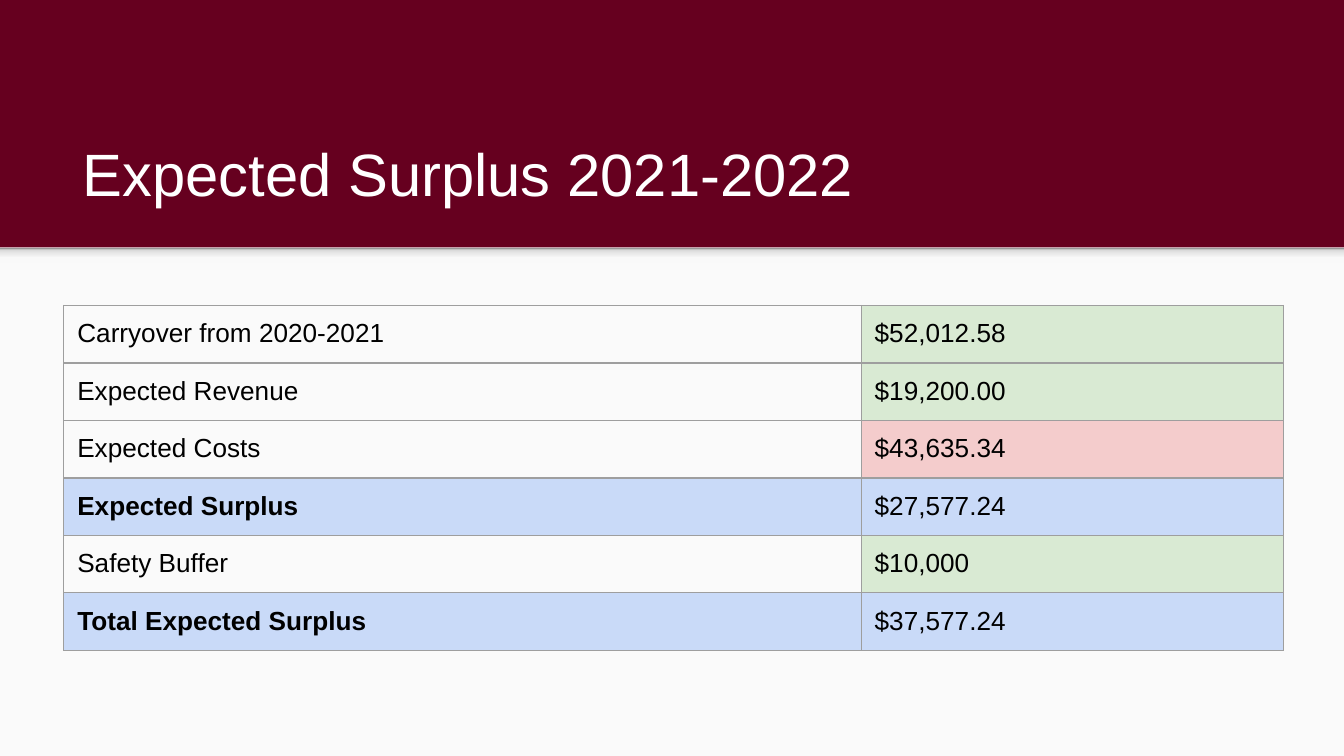
from lxml import etree
from pptx import Presentation
from pptx.dml.color import RGBColor
from pptx.enum import shapes, text
from pptx.oxml import ns
from pptx.util import Pt

MAROON = RGBColor(0x66, 0x00, 0x1F)
PAPER = RGBColor(0xFA, 0xFA, 0xFA)
WHITE = RGBColor(0xFF, 0xFF, 0xFF)
BLACK = RGBColor(0x00, 0x00, 0x00)
GREEN = RGBColor(0xD9, 0xEA, 0xD3)
RED = RGBColor(0xF4, 0xCC, 0xCC)
BLUE = RGBColor(0xC9, 0xDA, 0xF8)
GRID = RGBColor(0x9E, 0x9E, 0x9E)
LIGHT = RGBColor(0xF9, 0xF9, 0xF9)
SOFT = RGBColor(0xDE, 0xDE, 0xDE)
DARK = RGBColor(0x99, 0x99, 0x99)

FONT = "Arial"
WIDTH, HEIGHT = 720, 405
BAND_BOTTOM = 132.6
INSET = Pt(7.2)
ROW_HEIGHT = 30.8
COLUMN_WIDTHS = (427.2, 226.2)
SHADE_STOPS = ((0, LIGHT), (36, LIGHT), (80, SOFT), (100, DARK))

BUDGET = (
    ("Carryover from 2020-2021", "$52,012.58", GREEN, False),
    ("Expected Revenue", "$19,200.00", GREEN, False),
    ("Expected Costs", "$43,635.34", RED, False),
    ("Expected Surplus", "$27,577.24", BLUE, True),
    ("Safety Buffer", "$10,000", GREEN, False),
    ("Total Expected Surplus", "$37,577.24", BLUE, True),
)


def add_child(parent, tag, **attributes):
    return etree.SubElement(parent, ns.qn(tag), attributes)


def add_solid(parent, color):
    add_child(add_child(parent, "a:solidFill"), "a:srgbClr", val=str(color))


def set_insets(holder):
    holder.margin_left = holder.margin_right = INSET
    holder.margin_top = holder.margin_bottom = INSET


def write(paragraph, words, size, color, bold=False):
    run = paragraph.add_run()
    run.text = words
    run.font.name = FONT
    run.font.size = Pt(size)
    run.font.bold = bold
    run.font.color.rgb = color


def add_panel(slide, top, height):
    panel = slide.shapes.add_shape(
        shapes.MSO_SHAPE.RECTANGLE, 0, Pt(top), Pt(WIDTH), Pt(height))
    panel.shadow.inherit = False
    panel.line.fill.background()
    panel.fill.solid()
    panel.fill.fore_color.rgb = PAPER
    return panel


def shade(panel):
    panel.fill.gradient()
    panel.fill.gradient_angle = 90
    stops = panel.element.spPr.find(ns.qn("a:gradFill")).find(ns.qn("a:gsLst"))
    for stop in list(stops):
        stops.remove(stop)
    for percent, color in SHADE_STOPS:
        stop = add_child(stops, "a:gs", pos=str(percent * 1000))
        add_child(stop, "a:srgbClr", val=str(color))


def set_title(slide, words):
    title = slide.shapes.title
    title.left, title.top = Pt(37.2), Pt(58.2)
    title.width, title.height = Pt(647.4), Pt(60.6)
    frame = title.text_frame
    set_insets(frame)
    frame.word_wrap = True
    frame.auto_size = text.MSO_AUTO_SIZE.NONE
    frame.vertical_anchor = text.MSO_ANCHOR.BOTTOM
    frame.paragraphs[0].alignment = text.PP_ALIGN.LEFT
    write(frame.paragraphs[0], words, 32, WHITE)


def fill_cell(cell, words, fill, bold):
    set_insets(cell)
    write(cell.text_frame.paragraphs[0], words, 14, BLACK, bold)
    properties = cell._tc.get_or_add_tcPr()
    for side in ("a:lnL", "a:lnR", "a:lnT", "a:lnB"):
        add_solid(add_child(properties, side, w=str(Pt(0.75))), GRID)
    if fill is None:
        cell.fill.background()
    else:
        cell.fill.solid()
        cell.fill.fore_color.rgb = fill


def add_budget(slide):
    budget = slide.shapes.add_table(
        len(BUDGET), len(COLUMN_WIDTHS), Pt(34.2), Pt(163.7),
        Pt(sum(COLUMN_WIDTHS)), Pt(ROW_HEIGHT * len(BUDGET))).table
    budget.first_row = budget.horz_banding = False
    for column, width in zip(budget.columns, COLUMN_WIDTHS):
        column.width = Pt(width)
    for row, (label, amount, color, is_total) in zip(budget.rows, BUDGET):
        row.height = Pt(ROW_HEIGHT)
        fill_cell(row.cells[0], label, color if is_total else None, is_total)
        fill_cell(row.cells[1], amount, color, False)


def main():
    deck = Presentation()
    deck.slide_width, deck.slide_height = Pt(WIDTH), Pt(HEIGHT)
    slide = deck.slides.add_slide(deck.slide_layouts[5])
    slide.background.fill.solid()
    slide.background.fill.fore_color.rgb = MAROON
    add_panel(slide, BAND_BOTTOM, HEIGHT - BAND_BOTTOM)
    shade(add_panel(slide, BAND_BOTTOM, 8.6))
    set_title(slide, "Expected Surplus 2021-2022")
    add_budget(slide)
    deck.save("out.pptx")


if __name__ == "__main__":
    main()
